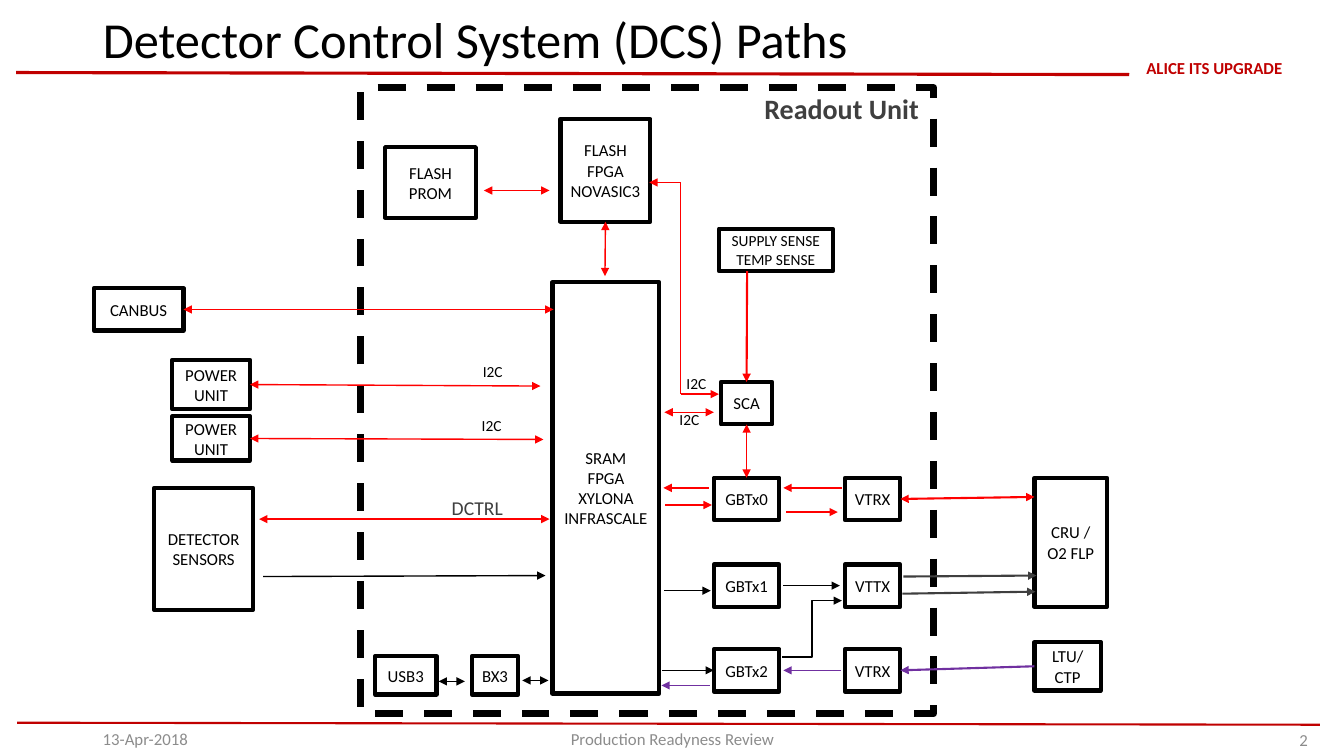
from lxml.etree import SubElement
from pptx import Presentation
from pptx.dml.color import RGBColor
from pptx.enum.dml import MSO_LINE
from pptx.enum.shapes import MSO_CONNECTOR, MSO_SHAPE
from pptx.enum.text import MSO_ANCHOR, PP_ALIGN
from pptx.oxml.ns import qn
from pptx.util import Inches, Pt

COLORS = {"black": "000000", "red": "FF0000", "purple": "7030A0",
          "charcoal": "3F3F3F", "crimson": "C00000", "grey": "8C8C8C"}
TOP, LEFT, BOTTOM, RIGHT = range(4)


def rgb(name):
    return RGBColor.from_string(COLORS[name])


def write(frame, text, size=12, color="black", bold=False, align=PP_ALIGN.LEFT,
          anchor=MSO_ANCHOR.MIDDLE, wrap=True, inset=None):
    """Fill a text frame with one formatted paragraph."""
    frame.word_wrap = wrap
    frame.vertical_anchor = anchor
    if inset is not None:
        frame.margin_left = frame.margin_right = Inches(inset)
        frame.margin_top = frame.margin_bottom = Inches(inset)
    paragraph = frame.paragraphs[0]
    paragraph.text = text
    paragraph.alignment = align
    for run in paragraph.runs:
        font = run.font
        font.name, font.size, font.bold = "Calibri", Pt(size), bold
        font.color.rgb = rgb(color)
    for line_break in paragraph._p.findall(qn("a:br")):
        SubElement(line_break, qn("a:rPr"), sz=str(size * 100))
    return paragraph


class Diagram:
    def __init__(self, slide):
        self.slide = slide
        self.shapes = slide.shapes

    def title(self, text, *place):
        heading = self.shapes.title
        heading.left, heading.top, heading.width, heading.height = map(Inches, place)
        write(heading.text_frame, text, size=36).line_spacing = 0.9

    def label(self, text, *place, **style):
        box = self.shapes.add_textbox(*map(Inches, place))
        write(box.text_frame, text, **style)

    def box(self, text, *place, size=12, weight=3, dash=None):
        block = self.shapes.add_shape(MSO_SHAPE.RECTANGLE, *map(Inches, place))
        block.shadow.inherit = False
        block.fill.background()
        block.line.color.rgb = rgb("black")
        block.line.width = Pt(weight)
        if dash:
            block.line.dash_style = dash
        if text:
            write(block.text_frame, text, size=size, align=PP_ALIGN.CENTER, wrap=False)
        return block

    def line(self, *ends, color="red", weight=1, arrows="end", start=None, end=None,
             kind=MSO_CONNECTOR.STRAIGHT):
        """Draw a connector; start and end are optional (box, side) joints."""
        link = self.shapes.add_connector(kind, *map(Inches, ends))
        if start:
            link.begin_connect(*start)
        if end:
            link.end_connect(*end)
        link.line.color.rgb = rgb(color)
        link.line.width = Pt(weight)
        outline = link.line._get_or_add_ln()
        if arrows in ("start", "both"):
            SubElement(outline, qn("a:headEnd"), type="triangle")
        if arrows in ("end", "both"):
            SubElement(outline, qn("a:tailEnd"), type="triangle")
        SubElement(link._element.spPr, qn("a:effectLst"))


def main():
    deck = Presentation()
    deck.slide_width, deck.slide_height = Inches(13.33), Inches(7.5)
    diagram = Diagram(deck.slides.add_slide(deck.slide_layouts[5]))

    # Header and footer
    diagram.line(0.16, 0.72, 11.2, 0.74, color="crimson", weight=2.25, arrows=None)
    diagram.line(13.09, 7.19, 0.17, 7.17, color="crimson", weight=1.5, arrows=None)
    diagram.label("ALICE ITS UPGRADE", 11.33, 0.58, 1.43, 0.19, color="crimson",
                  bold=True, align=PP_ALIGN.CENTER, wrap=False, inset=0)
    diagram.title("Detector Control System (DCS) Paths", 0.92, 0.06, 10.28, 0.72)
    diagram.label("13-Apr-2018", 0.92, 7.19, 3, 0.28, color="grey")
    diagram.label("Production Readyness Review", 4.42, 7.19, 4.5, 0.28,
                  color="grey", align=PP_ALIGN.CENTER)
    diagram.label("2", 11.55, 7.2, 1.52, 0.28, color="grey", align=PP_ALIGN.RIGHT)

    # Blocks outside the readout unit
    canbus = diagram.box("CANBUS", 0.93, 2.86, 0.89, 0.42)
    power_upper = diagram.box("POWER\nUNIT", 1.71, 3.57, 0.77, 0.49)
    power_lower = diagram.box("POWER\nUNIT", 1.71, 4.13, 0.77, 0.44)
    diagram.box("DETECTOR\nSENSORS", 1.53, 4.84, 0.98, 1.21)
    diagram.box("CRU /\nO2 FLP", 10.26, 4.74, 0.72, 1.28)
    trigger = diagram.box("LTU/\nCTP", 10.26, 6.37, 0.66, 0.48)

    # Blocks inside the readout unit
    diagram.box("FLASH\nPROM", 3.82, 1.46, 0.9, 0.7)
    flash_fpga = diagram.box("FLASH\nFPGA\nNOVASIC3", 5.56, 1.18, 0.89, 1.02)
    diagram.box("SUPPLY SENSE\nTEMP SENSE", 7.13, 2.27, 1.13, 0.42, size=11)
    diagram.box("SRAM\nFPGA\nXYLONA\nINFRASCALE", 5.48, 2.8, 1.06, 4.08)
    diagram.box("USB3", 3.72, 6.51, 0.61, 0.38)
    diagram.box("BX3", 4.68, 6.51, 0.46, 0.38)
    sca = diagram.box("SCA", 7.15, 3.79, 0.51, 0.42)
    gbtx, optics = [], []
    for number, (optic, top) in enumerate([("VTRX", 4.74), ("VTTX", 5.6), ("VTRX", 6.44)]):
        gbtx.append(diagram.box(f"GBTx{number}", 7.08, top, 0.65, 0.42))
        optics.append(diagram.box(optic, 8.38, top, 0.55, 0.42))
    diagram.box("", 3.58, 0.87, 5.68, 6.21, weight=5, dash=MSO_LINE.DASH)

    # Control paths
    diagram.line(8.35, 4.84, 7.77, 4.84)
    diagram.line(7.8, 5.08, 8.31, 5.08)
    diagram.line(7.03, 4.84, 6.58, 4.84)
    diagram.line(6.6, 5.01, 7.06, 5.01)
    diagram.line(7.08, 4.09, 6.59, 4.09, arrows="both")
    diagram.line(4.8, 1.89, 5.45, 1.89, arrows="both")
    diagram.line(6, 2.74, 6, 2.22, arrows="both", end=(flash_fpga, BOTTOM))
    diagram.line(1.82, 3.07, 5.49, 3.07, arrows="both", start=(canbus, RIGHT))
    diagram.line(2.48, 3.82, 5.36, 3.83, arrows="both", start=(power_upper, RIGHT))
    diagram.line(2.48, 4.35, 5.39, 4.36, arrows="both", start=(power_lower, RIGHT))
    diagram.line(2.57, 5.15, 5.45, 5.15, arrows="both")
    diagram.line(7.41, 4.74, 7.41, 4.21, arrows="both",
                 start=(gbtx[0], TOP), end=(sca, BOTTOM))
    diagram.line(7.41, 2.69, 7.41, 3.79, weight=1.5, end=(sca, TOP))
    diagram.line(8.93, 4.95, 10.26, 4.93, weight=1.5, arrows="both",
                 start=(optics[0], RIGHT))

    # Route from SCA to the flash FPGA
    diagram.line(6.75, 1.81, 6.44, 1.81)
    diagram.line(6.75, 1.81, 6.75, 3.91, arrows=None)
    diagram.line(6.75, 3.91, 7.13, 3.91)

    # Data paths
    diagram.line(2.61, 5.72, 5.41, 5.71, color="black")
    diagram.line(6.59, 5.86, 7.05, 5.86, color="black")
    diagram.line(6.57, 6.65, 7.08, 6.65, color="black", end=(gbtx[2], LEFT))
    diagram.line(7.77, 5.81, 8.33, 5.81, color="black")
    diagram.line(7.76, 6.52, 8.35, 5.96, color="black", kind=MSO_CONNECTOR.ELBOW)
    diagram.line(5.18, 6.75, 5.44, 6.75, color="black", arrows="both")
    diagram.line(4.35, 6.76, 4.61, 6.76, color="black", arrows="both")
    diagram.line(8.96, 5.72, 10.28, 5.71, color="charcoal", weight=1.5)
    diagram.line(8.95, 5.89, 10.27, 5.87, color="charcoal", weight=1.5)

    # Trigger path
    diagram.line(7.04, 6.8, 6.56, 6.8, color="purple")
    diagram.line(8.34, 6.65, 7.77, 6.65, color="purple")
    diagram.line(8.93, 6.65, 10.26, 6.61, color="purple", weight=1.5, arrows="start",
                 start=(optics[2], RIGHT), end=(trigger, LEFT))

    # Path labels
    for left, top in [(6.64, 4.02), (6.71, 3.66), (4.69, 3.54), (4.68, 4.08)]:
        diagram.label("I2C", left, top, 0.4, 0.29, size=11, wrap=False,
                      anchor=MSO_ANCHOR.TOP)
    diagram.label("Readout Unit", 7.54, 0.9, 1.68, 0.34, size=20, color="charcoal",
                  bold=True, inset=0.04)
    diagram.label("DCTRL", 4.44, 4.88, 0.7, 0.31, size=14, color="charcoal", inset=0.04)

    deck.save("out.pptx")


if __name__ == "__main__":
    main()
